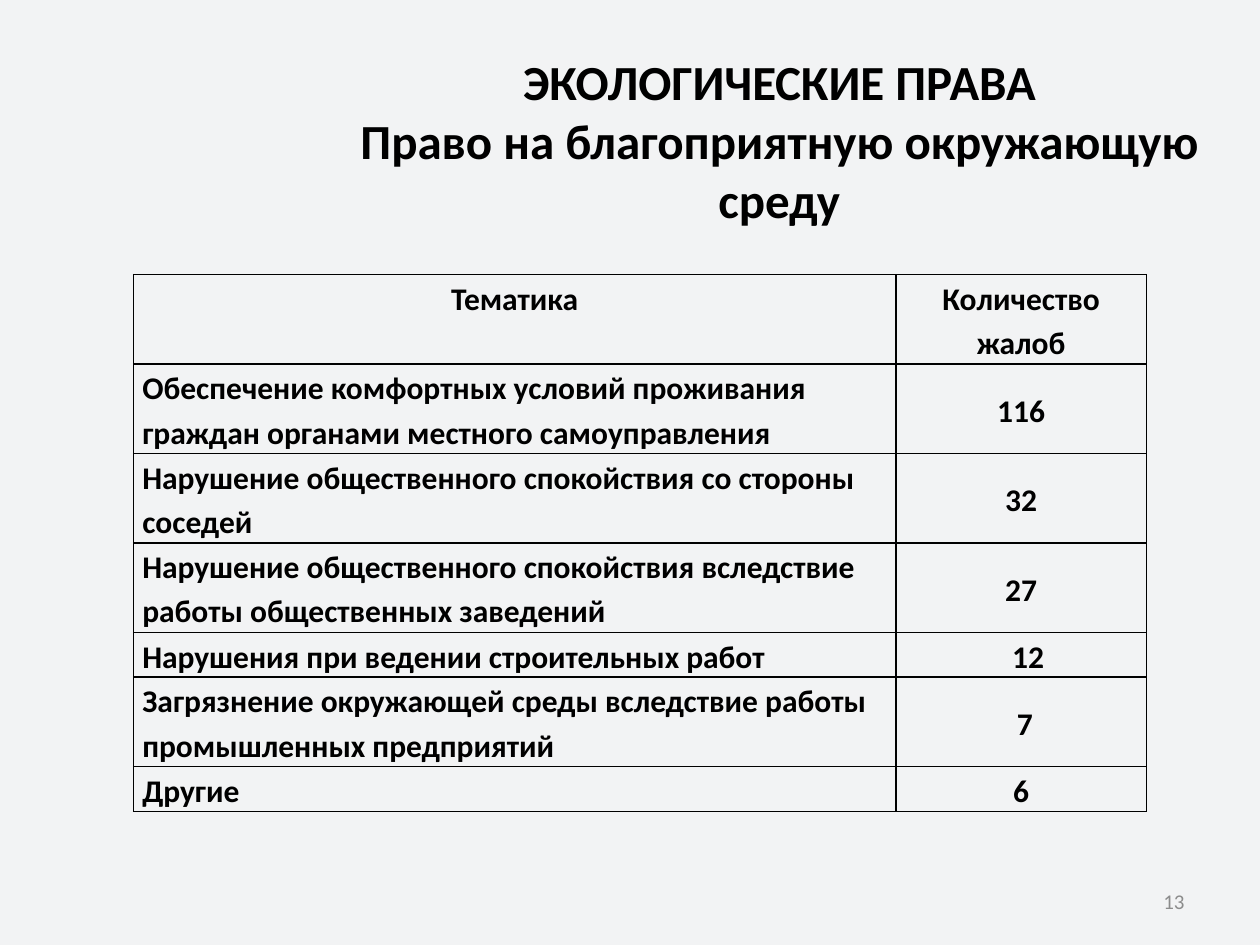
from lxml import etree
from pptx import Presentation
from pptx.dml.color import RGBColor
from pptx.enum import text
from pptx.oxml import ns
from pptx.util import Inches, Pt

ALIGN, ANCHOR = text.PP_ALIGN, text.MSO_ANCHOR
FONT, BLACK, GREY, BACK = "Calibri", "000000", "8C8C8C", "F2F3F4"

HEADER = ("Тематика", "Количество жалоб")
# topic, complaints, left indent of the number in inches
COMPLAINTS = [
    ("Обеспечение комфортных условий проживания граждан органами местного самоуправления", "116", 0),
    ("Нарушение общественного спокойствия со стороны соседей", "32", 0),
    ("Нарушение общественного спокойствия вследствие работы общественных заведений", "27", 0),
    ("Нарушения при ведении строительных работ", "12", 0.11),
    ("Загрязнение окружающей среды вследствие работы промышленных предприятий", "7", 0.06),
    ("Другие", "6", 0),
]
COLUMNS = (6.05, 1.99)
LINE = 0.355  # height of one text line in the table
LINES = (2, 2, 2, 2, 1, 2, 1)


def color(value):
    return RGBColor.from_string(value)


def add_text(p, content, size, align, fill=BLACK, bold=True):
    p.alignment = align
    r = p.add_run()
    r.text = content
    r.font.name, r.font.size, r.font.bold = FONT, Pt(size), bold
    r.font.color.rgb = color(fill)


def add_box(s, box, anchor):
    tf = s.shapes.add_textbox(*map(Inches, box)).text_frame
    tf.word_wrap = True
    tf.vertical_anchor = anchor
    return tf


def add_title(s, box):
    tf = add_box(s, box, ANCHOR.BOTTOM)
    add_text(tf.paragraphs[0], "ЭКОЛОГИЧЕСКИЕ ПРАВА", 28, ALIGN.CENTER)
    add_text(tf.add_paragraph(), "Право на благоприятную окружающую среду", 28, ALIGN.CENTER)


def add_page_number(s, box):
    tf = add_box(s, box, ANCHOR.MIDDLE)
    add_text(tf.paragraphs[0], "13", 12, ALIGN.RIGHT, GREY, False)


def set_borders(cell):
    tc_pr = cell._tc.get_or_add_tcPr()
    for i, side in enumerate(("lnL", "lnR", "lnT", "lnB")):
        ln = etree.Element(ns.qn("a:" + side), w=str(Pt(1)))
        fill = etree.SubElement(ln, ns.qn("a:solidFill"))
        etree.SubElement(fill, ns.qn("a:srgbClr"), val=BLACK)
        tc_pr.insert(i, ln)


def fill_cell(cell, content, align, anchor, indent=0):
    cell.margin_left = cell.margin_right = Inches(0.07)
    cell.margin_top = cell.margin_bottom = 0
    cell.vertical_anchor = anchor
    cell.fill.background()
    set_borders(cell)
    p = cell.text_frame.paragraphs[0]
    p.line_spacing = 1.15
    add_text(p, content, 18, align)
    if indent:
        p._p.get_or_add_pPr().set("marL", str(Inches(indent)))


def add_complaints_table(s, box):
    table = s.shapes.add_table(len(LINES), len(COLUMNS), *map(Inches, box)).table
    table.first_row = table.horz_banding = False
    for column, width in zip(table.columns, COLUMNS):
        column.width = Inches(width)
    for row, lines in zip(table.rows, LINES):
        row.height = Inches(lines * LINE)
    for i, heading in enumerate(HEADER):
        fill_cell(table.cell(0, i), heading, ALIGN.CENTER, ANCHOR.TOP)
    for i, (topic, count, indent) in enumerate(COMPLAINTS, 1):
        fill_cell(table.cell(i, 0), topic, ALIGN.LEFT, ANCHOR.TOP)
        fill_cell(table.cell(i, 1), count, ALIGN.CENTER, ANCHOR.MIDDLE, indent)


def main():
    prs = Presentation()
    prs.slide_width, prs.slide_height = Inches(10), Inches(7.5)
    s = prs.slides.add_slide(prs.slide_layouts[6])
    s.background.fill.solid()
    s.background.fill.fore_color.rgb = color(BACK)
    add_title(s, (2.68, 1.24, 7.01, 0.62))
    add_page_number(s, (7.17, 6.95, 2.33, 0.4))
    add_complaints_table(s, (1.06, 2.18, sum(COLUMNS), sum(LINES) * LINE))
    prs.save("out.pptx")


if __name__ == "__main__":
    main()
